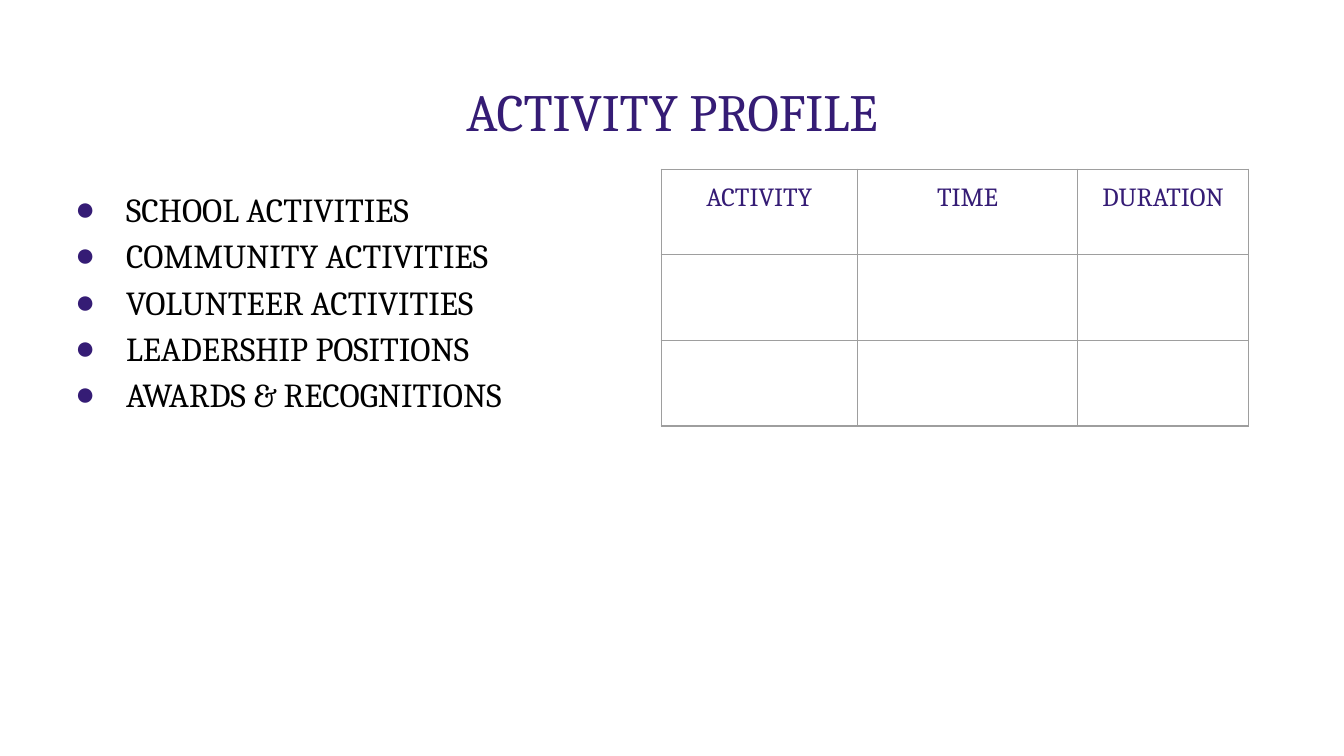
from lxml.etree import SubElement
from pptx import Presentation
from pptx.dml.color import RGBColor
from pptx.enum.text import MSO_ANCHOR, MSO_AUTO_SIZE, PP_ALIGN
from pptx.oxml.ns import qn
from pptx.util import Inches, Pt

WIDE = Inches(10)
HIGH = WIDE * 9 // 16
PURPLE = RGBColor(0x35, 0x1C, 0x75)
BLACK = RGBColor(0, 0, 0)
GRAY = RGBColor(0x9E, 0x9E, 0x9E)

PAD = Inches(0.1)
LEFT, TOP = Inches(0.34), Inches(1.26)
COLS = [Inches(1.46), Inches(1.64), Inches(1.27)]
ROWS = 3
ROW = Inches(1.91) // ROWS

HEADS = ["ACTIVITY", "TIME", "DURATION"]
ITEMS = [
    "SCHOOL ACTIVITIES",
    "COMMUNITY ACTIVITIES",
    "VOLUNTEER ACTIVITIES",
    "LEADERSHIP POSITIONS",
    "AWARDS & RECOGNITIONS",
]
CELL = {
    "margin_left": PAD, "margin_right": PAD,
    "margin_top": PAD, "margin_bottom": PAD,
    "vertical_anchor": MSO_ANCHOR.TOP,
}
FRAME = CELL | {"word_wrap": True, "auto_size": MSO_AUTO_SIZE.NONE}


def style(item, form):
    for key, val in form.items():
        setattr(item, key, val)


def write(para, text, size, color, align=PP_ALIGN.LEFT):
    para.alignment = align
    run = para.add_run()
    run.text = text
    style(run.font, {"name": "Cambria", "size": Pt(size), "bold": False})
    run.font.color.rgb = color


def paint(parent, color):
    SubElement(parent, qn("a:srgbClr"), val=str(color))


def bullet(para):
    props = para._p.get_or_add_pPr()
    props.set("marL", str(Inches(0.5)))
    props.set("indent", str(-Inches(0.38)))
    paint(SubElement(props, qn("a:buClr")), PURPLE)
    SubElement(props, qn("a:buFont"), typeface="Arial")
    SubElement(props, qn("a:buChar"), char="●")


def border(cell):
    props = cell._tc.get_or_add_tcPr()
    for side in ("lnL", "lnR", "lnT", "lnB"):
        line = SubElement(props, qn(f"a:{side}"), w=str(Pt(0.75)))
        paint(SubElement(line, qn("a:solidFill")), GRAY)


def add_title(slide):
    title = slide.shapes.title
    style(title, {"left": LEFT, "top": Inches(0.49),
                  "width": WIDE - 2 * LEFT, "height": Inches(0.63)})
    style(title.text_frame, FRAME)
    write(title.text_frame.paragraphs[0], "ACTIVITY PROFILE", 28, PURPLE,
          PP_ALIGN.CENTER)


def add_list(slide):
    box = slide.shapes.add_textbox(LEFT, TOP, Inches(4.16), Inches(2.03))
    frame = box.text_frame
    style(frame, FRAME)
    for num, text in enumerate(ITEMS):
        para = frame.add_paragraph() if num else frame.paragraphs[0]
        para.line_spacing = 1.15
        write(para, text, 18, BLACK)
        bullet(para)


def add_grid(slide):
    grid = slide.shapes.add_table(ROWS, len(COLS), Inches(4.92), TOP,
                                  sum(COLS), ROWS * ROW).table
    style(grid, {"first_row": False, "horz_banding": False})
    for col, width in zip(grid.columns, COLS):
        col.width = width
    for row in grid.rows:
        row.height = ROW
    for cell in grid.iter_cells():
        style(cell, CELL)
        border(cell)
        cell.fill.background()
    for cell, text in zip(grid.rows[0].cells, HEADS):
        write(cell.text_frame.paragraphs[0], text, 14, PURPLE,
              PP_ALIGN.CENTER)


def main():
    deck = Presentation()
    style(deck, {"slide_width": WIDE, "slide_height": HIGH})
    slide = deck.slides.add_slide(deck.slide_layouts[5])
    add_title(slide)
    add_list(slide)
    add_grid(slide)
    deck.save("out.pptx")


if __name__ == "__main__":
    main()
